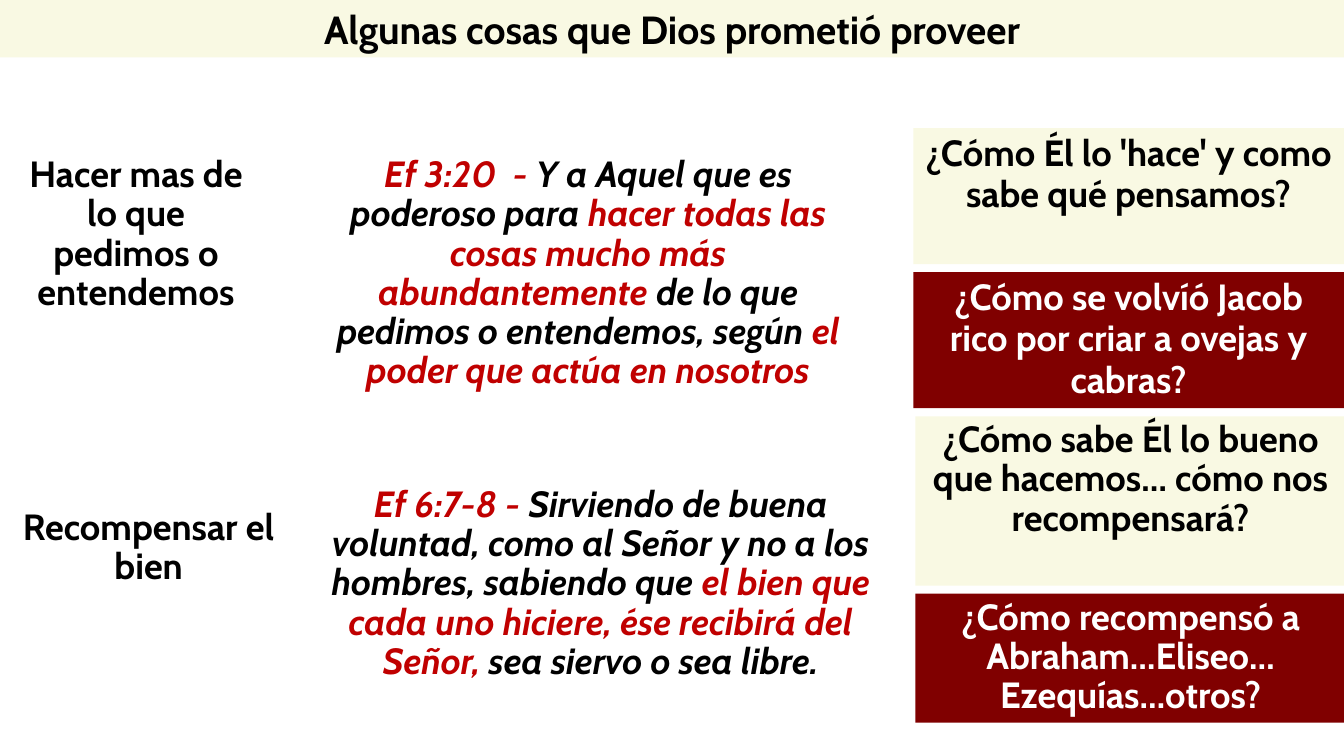
from pptx import Presentation
from pptx.dml.color import RGBColor
from pptx.enum.shapes import MSO_SHAPE
from pptx.enum.text import MSO_ANCHOR, MSO_AUTO_SIZE, PP_ALIGN
from pptx.util import Inches, Pt

RECTANGLE = MSO_SHAPE.RECTANGLE
TOP = MSO_ANCHOR.TOP
FIXED = MSO_AUTO_SIZE.NONE
CENTER = PP_ALIGN.CENTER

COLORS = {"black": "000000", "white": "FFFFFF", "red": "C00000",
          "cream": "F9F9E3", "maroon": "800000"}
FONT = "Cabin"
SLIDE_WIDTH, SLIDE_HEIGHT = 13.33, 7.5
TITLE_HEIGHT = 0.57
PROMISE_LEFT, VERSE_LEFT = 0.12, 3
QUESTION_WIDTH = 4.27

ROWS = [
    {
        "promise": ("Hacer mas de lo que pedimos o entendemos", 1.5, 2.46, 1.68),
        "verse": ([("Ef 3:20  - ", "red"),
                   ("Y a Aquel que es poderoso para ", "black"),
                   ("hacer todas las cosas mucho más abundantemente ", "red"),
                   ("de lo que pedimos o entendemos, según ", "black"),
                   ("el poder que actúa en nosotros", "red")], 1.5, 5.67, 2.86),
        "question_left": 9.06,
        "spacing": 0.95,
        "questions": [
            ("¿Cómo Él lo 'hace' y como sabe qué pensamos?",
             1.27, 1.35, "cream", "black"),
            ("¿Cómo se volvíó Jacob rico por criar a ovejas y cabras?",
             2.7, 1.35, "maroon", "white")],
    },
    {
        "promise": ("Recompensar el bien", 5, 2.71, 0.89),
        "verse": ([("Ef 6:7-8 - ", "red"),
                   ("Sirviendo de buena voluntad, como al Señor y no a los "
                    "hombres, sabiendo que ", "black"),
                   ("el bien que cada uno hiciere, ése recibirá del Señor, ", "red"),
                   ("sea siervo o sea libre.", "black")], 4.77, 5.92, 2.46),
        "question_left": 9.08,
        "spacing": 0.9,
        "questions": [
            ("¿Cómo sabe Él lo bueno que hacemos… cómo nos recompensará?",
             4.13, 1.68, "cream", "black"),
            ("¿Cómo recompensó a Abraham…Eliseo… Ezequías…otros?",
             5.89, 1.28, "maroon", "white")],
    },
]


def color(name):
    """Return the named colour."""
    return RGBColor.from_string(COLORS[name])


def write_text(shape, runs, size=26, spacing=0.9, italic=False):
    """Fill a shape with one centred bold paragraph of coloured runs."""
    frame = shape.text_frame
    frame.word_wrap = True
    frame.auto_size = FIXED
    frame.vertical_anchor = TOP
    frame.margin_left = frame.margin_right = Inches(0.1)
    frame.margin_top = frame.margin_bottom = Inches(0.05)
    paragraph = frame.paragraphs[0]
    paragraph.alignment = CENTER
    paragraph.line_spacing = spacing
    paragraph.space_before = Pt(0)
    for text, color_name in runs:
        run = paragraph.add_run()
        run.text = text
        run.font.name = FONT
        run.font.size = Pt(size)
        run.font.bold = True
        run.font.italic = italic
        run.font.color.rgb = color(color_name)


def add_title(slide, text):
    """Format the title placeholder as a band across the top."""
    title = slide.shapes.title
    title.left = title.top = 0
    title.width, title.height = Inches(SLIDE_WIDTH), Inches(TITLE_HEIGHT)
    title.fill.solid()
    title.fill.fore_color.rgb = color("cream")
    write_text(title, [(text, "black")], size=28, spacing=1.0)


def add_text(slide, runs, left, top, width, height, italic=False):
    """Add a plain text box."""
    box = slide.shapes.add_textbox(*map(Inches, (left, top, width, height)))
    write_text(box, runs, italic=italic)


def add_question(slide, question, left, spacing):
    """Add a filled question panel."""
    text, top, height, fill, text_color = question
    panel = slide.shapes.add_shape(
        RECTANGLE, *map(Inches, (left, top, QUESTION_WIDTH, height)))
    panel.shadow.inherit = False
    panel.fill.solid()
    panel.fill.fore_color.rgb = color(fill)
    panel.line.fill.background()
    write_text(panel, [(text, text_color)], spacing=spacing)


def main():
    """Build and save the slide."""
    presentation = Presentation()
    presentation.slide_width = Inches(SLIDE_WIDTH)
    presentation.slide_height = Inches(SLIDE_HEIGHT)
    slide = presentation.slides.add_slide(presentation.slide_layouts[5])
    add_title(slide, "Algunas cosas que Dios prometió proveer")
    for row in ROWS:
        promise, *promise_box = row["promise"]
        verse, *verse_box = row["verse"]
        add_text(slide, [(promise, "black")], PROMISE_LEFT, *promise_box)
        add_text(slide, verse, VERSE_LEFT, *verse_box, italic=True)
        for question in row["questions"]:
            add_question(slide, question, row["question_left"], row["spacing"])
    presentation.save("out.pptx")


if __name__ == "__main__":
    main()
